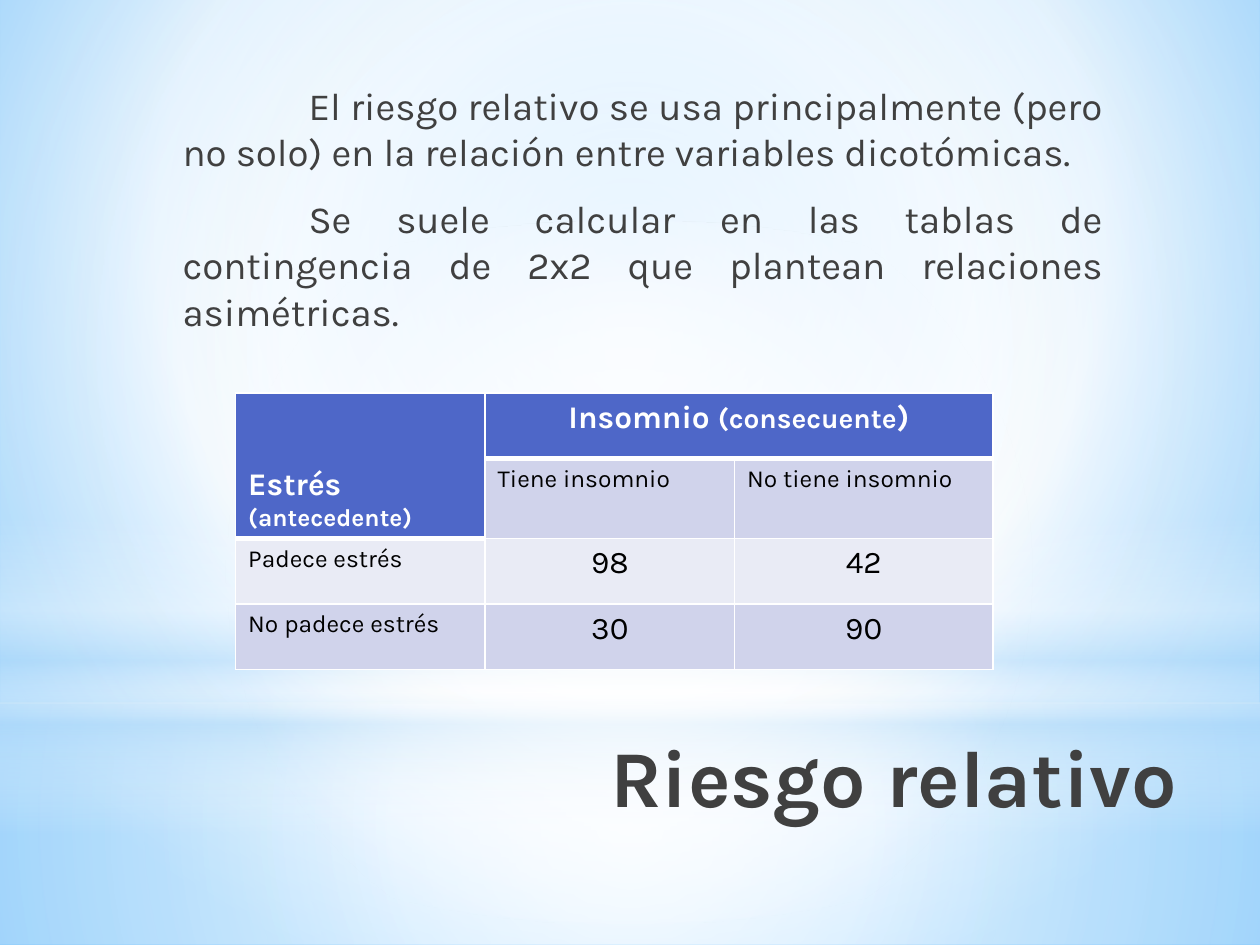
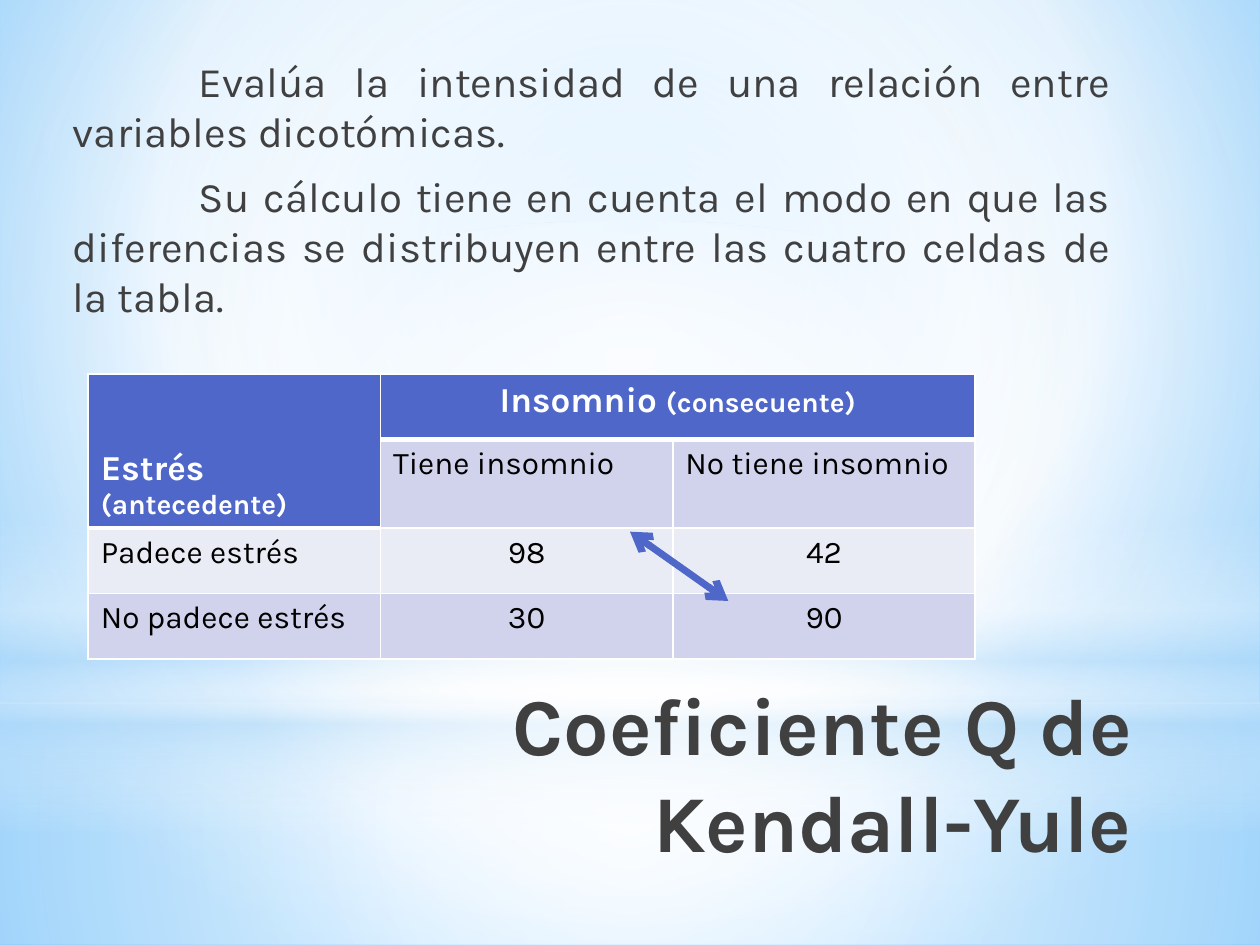
"""Two slides on relative risk and Yule's Q, each with a 2x2 contingency table."""
from dataclasses import dataclass
from typing import Any

from lxml import etree
from pptx import Presentation
from pptx.dml.color import RGBColor
from pptx.enum.shapes import MSO_CONNECTOR, MSO_SHAPE
from pptx.enum.text import MSO_ANCHOR, PP_ALIGN
from pptx.oxml.ns import qn
from pptx.util import Inches, Pt

RECT, OVAL = MSO_SHAPE.RECTANGLE, MSO_SHAPE.OVAL
STRAIGHT = MSO_CONNECTOR.STRAIGHT
LEFT, CENTER, RIGHT, JUSTIFY = PP_ALIGN.LEFT, PP_ALIGN.CENTER, PP_ALIGN.RIGHT, PP_ALIGN.JUSTIFY
TOP, BOTTOM = MSO_ANCHOR.TOP, MSO_ANCHOR.BOTTOM

FONT = "Karla"
INK, BLACK, WHITE = "404040", "000000", "FFFFFF"
ACCENT, TINT, PALE, SKY = "4E67C8", "D0D3EB", "E9EBF5", "B4DCFA"
ROW_HEIGHTS = (0.52, 0.48, 0.52, 0.52)
CENTERED = (50, 50, 50, 50)


@dataclass(frozen=True)
class Gradient:
    """Stops of position, colour and opacity; circular when focus is given, else vertical."""
    stops: tuple[tuple[int, str, int], ...]
    focus: tuple[int, ...] = ()


@dataclass(frozen=True)
class Band:
    """A translucent backdrop shape across the full slide width."""
    kind: Any
    top: float
    height: float
    gradient: Gradient


@dataclass(frozen=True)
class Box:
    """Place of a text box in inches."""
    left: float
    top: float
    width: float
    height: float


@dataclass(frozen=True)
class Body:
    """Body paragraphs and their spacing in points."""
    box: Box
    size: int
    indent: float
    before: int
    after: int
    paragraphs: tuple[str, ...]


@dataclass(frozen=True)
class Contingency:
    """Place and text sizes of the stress and insomnia table."""
    left: float
    top: float
    widths: tuple[float, ...]
    antecedent: tuple[tuple[str, int], ...]
    consequent: tuple[tuple[str, int], ...]
    label_size: int
    count_size: int = 18


BACKDROP = Gradient(((0, "9ED5FF", 100), (60, WHITE, 100), (100, "5BB9FF", 100)), (20, 10, 20, 60))
BANDS = (
    Band(RECT, 5.58, 1.92, Gradient(((0, WHITE, 91), (37, WHITE, 76), (100, SKY, 79)), CENTERED)),
    Band(RECT, 0, 5.58, Gradient(((0, WHITE, 89), (48, WHITE, 62), (100, SKY, 79)), CENTERED)),
    Band(RECT, 4.12, 2.5, Gradient(((0, WHITE, 0), (29, WHITE, 30), (45, SKY, 40),
                                    (55, WHITE, 26), (65, SKY, 60), (100, WHITE, 0)))),
    Band(OVAL, 1.75, 5.58, Gradient(((0, WHITE, 100), (56, WHITE, 0)), CENTERED)),
)


def rgb(value: str) -> RGBColor:
    """Turn a hex string into a colour."""
    return RGBColor.from_string(value)


def child(parent: Any, tag: str, **attrs: Any) -> Any:
    """Add an XML child element with the given attributes."""
    return etree.SubElement(parent, qn(tag), {k: str(v) for k, v in attrs.items()})


def fill_gradient(owner: Any, element: Any, gradient: Gradient) -> None:
    """Give a shape or background a gradient fill."""
    owner.fill.solid()
    owner.fill.fore_color.rgb = rgb(WHITE)
    solid = element.find(".//" + qn("a:solidFill"))
    grad = etree.Element(qn("a:gradFill"), rotWithShape="1")
    stops = child(grad, "a:gsLst")
    for pos, color, opacity in gradient.stops:
        clr = child(child(stops, "a:gs", pos=pos * 1000), "a:srgbClr", val=color)
        if opacity < 100:
            child(clr, "a:alpha", val=opacity * 1000)
    if gradient.focus:
        sides = {k: v * 1000 for k, v in zip("ltrb", gradient.focus)}
        child(child(grad, "a:path", path="circle"), "a:fillToRect", **sides)
    else:
        child(grad, "a:lin", ang=5400000, scaled=0)
    solid.getparent().replace(solid, grad)


def add_run(p: Any, text: str, *, size: int, color: str = INK, bold: bool = False,
            align: Any = LEFT) -> None:
    """Append formatted text to a paragraph."""
    p.alignment = align
    r = p.add_run()
    r.text = text
    r.font.name, r.font.size, r.font.bold = FONT, Pt(size), bold
    r.font.color.rgb = rgb(color)


def add_frame(s: Any, box: Box) -> Any:
    """Add a wrapping text box and return its text frame."""
    sp = s.shapes.add_textbox(*map(Inches, (box.left, box.top, box.width, box.height)))
    tf = sp.text_frame
    tf.word_wrap = True
    tf.vertical_anchor = TOP
    return tf


def add_title(s: Any, text: str, box: Box) -> None:
    """Add the large right-aligned title."""
    add_run(add_frame(s, box).paragraphs[0], text, size=46, bold=True, align=RIGHT)


def add_body(s: Any, body: Body) -> None:
    """Add justified paragraphs with an indented first line."""
    tf = add_frame(s, body.box)
    for i, text in enumerate(body.paragraphs):
        p = tf.add_paragraph() if i else tf.paragraphs[0]
        p.space_before, p.space_after = Pt(body.before), Pt(body.after)
        pPr = p._p.get_or_add_pPr()
        pPr.set("marL", str(Inches(body.indent)))
        pPr.set("indent", str(Inches(1)))
        add_run(p, text, size=body.size, align=JUSTIFY)


def style_cell(cell: Any, fill: str, top: int, bottom: int) -> None:
    """Set the white borders and the fill of a cell."""
    tcPr = cell._tc.get_or_add_tcPr()
    for side, width in (("L", 1), ("R", 1), ("T", top), ("B", bottom)):
        ln = child(tcPr, "a:ln" + side, w=Pt(width))
        child(child(ln, "a:solidFill"), "a:srgbClr", val=WHITE)
    cell.fill.solid()
    cell.fill.fore_color.rgb = rgb(fill)


def add_contingency(s: Any, spec: Contingency) -> None:
    """Add the 2x2 table with merged row and column headings."""
    size = map(Inches, (spec.left, spec.top, sum(spec.widths), sum(ROW_HEIGHTS)))
    table = s.shapes.add_table(4, 3, *size).table
    table.first_row = table.horz_banding = False
    for column, width in zip(table.columns, spec.widths):
        column.width = Inches(width)
    for row, height in zip(table.rows, ROW_HEIGHTS):
        row.height = Inches(height)
    table.cell(0, 0).merge(table.cell(1, 0))
    table.cell(0, 1).merge(table.cell(0, 2))

    label, count = spec.label_size, spec.count_size
    rows = (
        (spec.antecedent, spec.consequent, ()),
        ((), (("Tiene insomnio", label),), (("No tiene insomnio", label),)),
        ((("Padece estrés", label),), (("98", count),), (("42", count),)),
        ((("No padece estrés", label),), (("30", count),), (("90", count),)),
    )
    for i, row in enumerate(rows):
        for j, runs in enumerate(row):
            cell = table.cell(i, j)
            header = i == 0 or (i, j) == (1, 0)
            last_header_row = 1 if j == 0 else 0
            fill = ACCENT if header else PALE if i == 2 else TINT
            style_cell(cell, fill, 3 if i == last_header_row + 1 else 1, 3 if header else 1)
            for text, pt in runs:
                add_run(cell.text_frame.paragraphs[0], text, size=pt, bold=header,
                        color=WHITE if header else BLACK,
                        align=CENTER if j and i != 1 else LEFT)
    table.cell(0, 0).vertical_anchor = BOTTOM


def add_double_arrow(s: Any, start: tuple[float, float], end: tuple[float, float]) -> None:
    """Add a thick line with an arrowhead at both ends."""
    cx = s.shapes.add_connector(STRAIGHT, *map(Inches, start + end))
    cx.line.color.rgb = rgb(ACCENT)
    cx.line.width = Pt(4)
    ln = cx.line._get_or_add_ln()
    child(ln, "a:headEnd", type="arrow")
    child(ln, "a:tailEnd", type="arrow")
    child(cx.element.spPr, "a:effectLst")


def new_slide(prs: Any) -> Any:
    """Add a blank slide with the shared backdrop."""
    s = prs.slides.add_slide(prs.slide_layouts[6])
    fill_gradient(s.background, s.element, BACKDROP)
    for band in BANDS:
        sp = s.shapes.add_shape(band.kind, 0, Inches(band.top), prs.slide_width, Inches(band.height))
        sp.shadow.inherit = False
        sp.line.fill.background()
        fill_gradient(sp, sp.element, band.gradient)
    return s


def main() -> None:
    """Build and save the presentation."""
    prs = Presentation()
    prs.slide_width, prs.slide_height = Inches(10), Inches(7.5)

    s = new_slide(prs)
    add_title(s, "Riesgo relativo", Box(2.32, 5.72, 7.12, 1.57))
    add_body(s, Body(Box(1.3, 0.6, 7.55, 2.11), 22, 0.05, 0, 12, (
        "El riesgo relativo se usa principalmente (pero no solo) en la relación "
        "entre variables dicotómicas.",
        "Se suele calcular en las tablas de contingencia de 2x2 que plantean "
        "relaciones asimétricas.")))
    add_contingency(s, Contingency(
        1.87, 3.12, (1.98, 1.98, 2.05), (("Estrés ", 18), ("(antecedente)", 14)),
        (("Insomnio ", 18), ("(consecuente", 16), (")", 18)), label_size=14))

    s = new_slide(prs)
    add_title(s, "Coeficiente Q de Kendall-Yule", Box(1.96, 5.31, 7.12, 1.25))
    add_body(s, Body(Box(0.47, 0.39, 8.44, 2.17), 24, 0.01, 5, 3, (
        "Evalúa la intensidad de una relación entre variables dicotómicas.",
        "Su cálculo tiene en cuenta el modo en que las diferencias se distribuyen "
        "entre las cuatro celdas de la tabla.")))
    add_contingency(s, Contingency(
        0.7, 2.97, (2.32, 2.32, 2.4), (("Estrés ", 20), ("(antecedente)", 16)),
        (("Insomnio ", 20), ("(consecuente)", 16)), label_size=18))
    add_double_arrow(s, (5, 4.22), (5.78, 4.77))

    prs.save("out.pptx")


if __name__ == "__main__":
    main()
